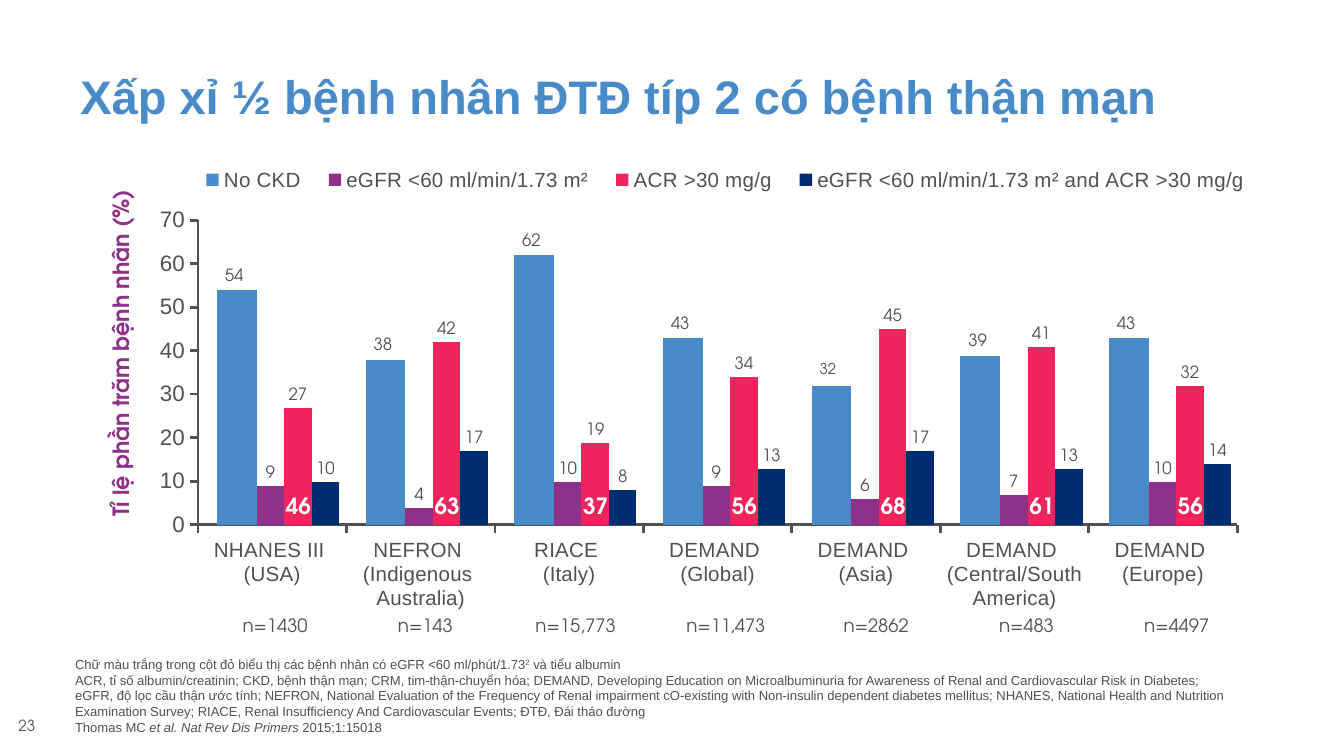
from lxml import etree
from pptx import Presentation
from pptx.chart.data import CategoryChartData
from pptx.dml.color import RGBColor
from pptx.enum.chart import XL_CHART_TYPE, XL_LEGEND_POSITION, XL_TICK_MARK
from pptx.enum.shapes import MSO_SHAPE
from pptx.enum.text import MSO_ANCHOR as ANCHOR, MSO_AUTO_SIZE, PP_ALIGN as ALIGN
from pptx.oxml.ns import qn
from pptx.util import Cm, Pt

BLUE = RGBColor(0x49, 0x8B, 0xC9)
PURPLE = RGBColor(0x8F, 0x30, 0x89)
RED = RGBColor(0xEE, 0x24, 0x5C)
NAVY = RGBColor(0x00, 0x2C, 0x71)
GREY = RGBColor(0x51, 0x51, 0x51)
WHITE = RGBColor(0xFF, 0xFF, 0xFF)
SANS, ROUND = "Arial", "TeX Gyre Adventor"

TITLE = "Xấp xỉ ½ bệnh nhân ĐTĐ típ 2 có bệnh thận mạn"
AXIS_TITLE = "Tỉ lệ phần trăm bệnh nhân (%)"
PAGE = "23"
SERIES = [
    ("No CKD", BLUE),
    ("eGFR <60 ml/min/1.73 m²", PURPLE),
    ("ACR >30 mg/g", RED),
    ("eGFR <60 ml/min/1.73 m² and ACR >30 mg/g", NAVY),
]
# study, percentages by series, white figure in the red bar, sample size
STUDIES = [
    ("NHANES III \n(USA)", (54, 9, 27, 10), 46, "n=1430"),
    ("NEFRON \n(Indigenous \nAustralia)", (38, 4, 42, 17), 63, "n=143"),
    ("RIACE \n(Italy)", (62, 10, 19, 8), 37, "n=15,773"),
    ("DEMAND \n(Global)", (43, 9, 34, 13), 56, "n=11,473"),
    ("DEMAND \n(Asia)", (32, 6, 45, 17), 68, "n=2862"),
    ("DEMAND \n(Central/South America)", (39, 7, 41, 13), 61, "n=483"),
    ("DEMAND \n(Europe)", (43, 10, 32, 14), 56, "n=4497"),
]
FOOTNOTE = [
    [("Chữ màu trắng trong cột đỏ biểu thị các bệnh nhân có eGFR <60 ml/phút/1.73", ""),
     ("2", "super"),
     (" và tiểu albumin\nACR, tỉ số albumin/creatinin; CKD, bệnh thận mạn; CRM, "
      "tim-thận-chuyển hóa; DEMAND, Developing Education on Microalbuminuria for "
      "Awareness of Renal and Cardiovascular Risk in Diabetes; eGFR, độ lọc cầu thận "
      "ước tính; NEFRON, National Evaluation of the Frequency of Renal impairment "
      "cO-existing with Non-insulin dependent diabetes mellitus; NHANES, National "
      "Health and Nutrition Examination Survey; RIACE, Renal Insufficiency And "
      "Cardiovascular Events; ĐTĐ, Đái tháo đường", "")],
    [("Thomas MC ", ""), ("et al. Nat Rev Dis Primers ", "italic"), ("2015;1:15018", "")],
]

# Bar geometry in centimetres
BASELINE, PLOT_H, AXIS_MAX = 9.93, 5.76, 70
FIRST_LEFT, STEP = 4.1, 2.81
WIDTHS = (0.75, 0.52, 0.52, 0.52)


def add_text(sp, text, size=9, font=ROUND, color=GREY, bold=False, align=ALIGN.LEFT,
             anchor=ANCHOR.TOP, insets=(0.25, 0.13, 0.25, 0.13), wrap=True, spacing=None):
    """Fill a shape with a string or with paragraphs of (text, style) runs."""
    tf = sp.text_frame
    tf.word_wrap = wrap
    tf.vertical_anchor = anchor
    tf.margin_left, tf.margin_top, tf.margin_right, tf.margin_bottom = map(Cm, insets)
    paragraphs = [[(text, "")]] if isinstance(text, str) else text
    for i, runs in enumerate(paragraphs):
        p = tf.add_paragraph() if i else tf.paragraphs[0]
        p.alignment = align
        if spacing:
            p.line_spacing = spacing
        for content, style in runs:
            for j, line in enumerate(content.split("\n")):
                if j:
                    p.add_line_break()
                r = p.add_run()
                r.text = line
                r.font.name, r.font.size, r.font.bold = font, Pt(size), bold
                r.font.color.rgb = color
                if style == "italic":
                    r.font.italic = True
                elif style == "super":
                    r.font._element.set("baseline", "30000")
    return sp


def text_box(s, x, y, w, h, text, **fmt):
    return add_text(s.shapes.add_textbox(Cm(x), Cm(y), Cm(w), Cm(h)), text, **fmt)


def set_layout(parent, index, x, y, w, h, inner=False):
    """Give a plot area or legend a fixed place, as fractions of the chart."""
    for old in parent.findall(qn("c:layout")):
        parent.remove(old)
    layout = etree.Element(qn("c:layout"))
    manual = etree.SubElement(layout, qn("c:manualLayout"))
    values = {"layoutTarget": "inner"} if inner else {}
    values.update(xMode="edge", yMode="edge", x=x, y=y, w=w, h=h)
    for tag, value in values.items():
        etree.SubElement(manual, qn("c:" + tag)).set("val", str(value))
    parent.insert(index, layout)


def set_font(font, size):
    font.name, font.size = SANS, Pt(size)
    font.color.rgb = GREY


def add_axes_chart(s):
    """Axes and legend; the bars are drawn over them."""
    data = CategoryChartData()
    data.categories = [study[0] for study in STUDIES]
    for name, _ in SERIES:
        data.add_series(name, [0] * len(STUDIES))
    chart = s.shapes.add_chart(XL_CHART_TYPE.COLUMN_CLUSTERED, Cm(2.87), Cm(2.87),
                               Cm(21.26), Cm(8.79), data).chart
    chart.has_title = False
    set_font(chart.font, 12)
    plot = chart.plots[0]
    plot.gap_width = 150
    plot.vary_by_categories = False
    for series, (_, color) in zip(plot.series, SERIES):
        series.format.fill.solid()
        series.format.fill.fore_color.rgb = color
    for axis, size in ((chart.category_axis, 11), (chart.value_axis, 12)):
        axis.has_major_gridlines = False
        axis.major_tick_mark = XL_TICK_MARK.OUTSIDE
        axis.minor_tick_mark = XL_TICK_MARK.NONE
        axis.format.line.color.rgb = GREY
        axis.format.line.width = Pt(1.5)
        set_font(axis.tick_labels.font, size)
    axis = chart.value_axis
    axis.minimum_scale, axis.maximum_scale, axis.major_unit = 0, AXIS_MAX, 10
    chart.has_legend = True
    legend = chart.legend
    legend.position = XL_LEGEND_POSITION.BOTTOM
    legend.include_in_layout = False
    set_font(legend.font, 11)
    set_layout(legend._element, 1, 0.03, 0.02, 0.96, 0.08)
    plot_area = chart._chartSpace.find(".//" + qn("c:plotArea"))
    set_layout(plot_area, 0, 0.04, 0.15, 0.92, 0.65, inner=True)
    # Three decimals keep the axis aligned with the bars
    set_layout(plot_area, 0, 0.041, 0.147, 0.924, 0.655, inner=True)


def bar_place(study, series):
    left = FIRST_LEFT + study * STEP + sum(WIDTHS[:series])
    top = BASELINE - STUDIES[study][1][series] * PLOT_H / AXIS_MAX
    return left, top


def add_bar(group, left, top, width, color):
    right = left + width
    builder = group.shapes.build_freeform(Cm(left), Cm(top))
    builder.add_line_segments([(Cm(right), Cm(top)), (Cm(right), Cm(BASELINE)),
                               (Cm(left), Cm(BASELINE))])
    sp = builder.convert_to_shape()
    sp.shadow.inherit = False
    sp.fill.solid()
    sp.fill.fore_color.rgb = color
    sp.line.fill.background()


def main():
    prs = Presentation()
    prs.slide_width, prs.slide_height = Cm(25.4), Cm(14.29)
    s = prs.slides.add_slide(prs.slide_layouts[6])
    add_axes_chart(s)
    for k in reversed(range(len(SERIES))):
        group = s.shapes.add_group_shape()
        for i in range(len(STUDIES)):
            add_bar(group, *bar_place(i, k), WIDTHS[k], SERIES[k][1])

    text_box(s, 1.27, 0.36, 22.22, 2.13, TITLE, size=25.2, font=SANS, color=BLUE,
             bold=True, anchor=ANCHOR.BOTTOM, spacing=0.9)
    text_box(s, 1.17, 13.26, 22.33, 0.76, FOOTNOTE, size=7, font=SANS,
             anchor=ANCHOR.BOTTOM)
    sp = text_box(s, -1.09, 6.27, 6.73, 0.76, AXIS_TITLE, size=12, color=PURPLE,
                  bold=True, wrap=False)
    sp.text_frame.auto_size = MSO_AUTO_SIZE.SHAPE_TO_FIT_TEXT
    sp.rotation = 270

    for i, (_, values, white_figure, sample) in enumerate(STUDIES):
        text_box(s, 4.15 + i * 2.84, 11.48, 2.1, 0.69, sample, size=9.8,
                 align=ALIGN.CENTER)
        left, _ = bar_place(i, 2)
        sp = s.shapes.add_shape(MSO_SHAPE.ROUNDED_RECTANGLE, Cm(left - 0.35), Cm(9.25),
                                Cm(1.24), Cm(0.61))
        sp.shadow.inherit = False
        sp.fill.background()
        sp.line.fill.background()
        add_text(sp, str(white_figure), size=12, color=WHITE, bold=True,
                 align=ALIGN.CENTER, anchor=ANCHOR.MIDDLE)
        for k, value in enumerate(values):
            left, top = bar_place(i, k)
            if k == 0:
                text_box(s, left - 0.1, top - 0.62, 1.02, 0.64, str(value),
                         size=8 if value == 32 else 9)
            else:
                text_box(s, left + 0.03, top - 0.46, 0.46, 0.46, str(value),
                         align=ALIGN.CENTER, insets=(0, 0, 0, 0))
    text_box(s, 0.1, 13.44, 0.86, 0.58, PAGE, size=8.2, anchor=ANCHOR.BOTTOM,
             insets=(0.25, 0.13, 0, 0.13))
    prs.save("out.pptx")


if __name__ == "__main__":
    main()
